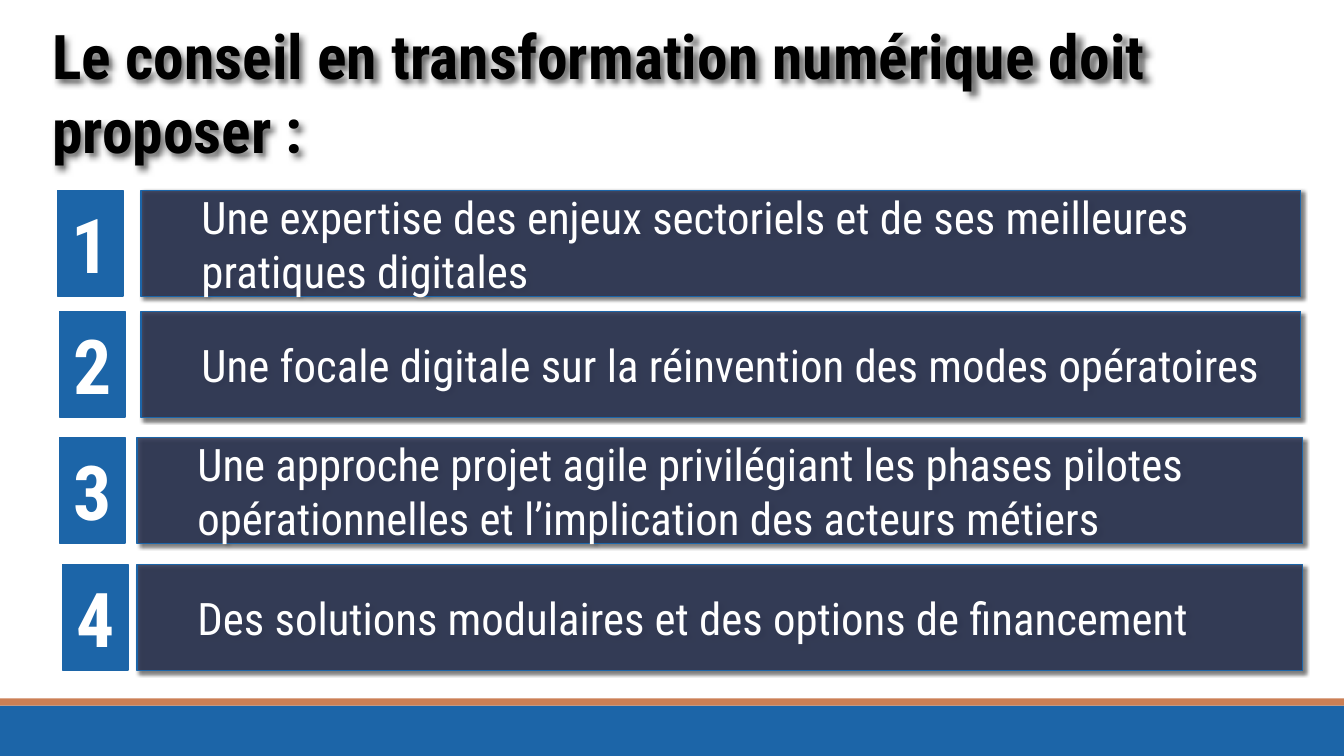
from lxml import etree
from pptx import Presentation
from pptx.dml.color import RGBColor
from pptx.enum.shapes import MSO_SHAPE
from pptx.enum.text import MSO_ANCHOR, PP_ALIGN
from pptx.oxml.ns import qn
from pptx.util import Inches, Pt

# Content: number, text, number left, bar left, top, bar width
TITLE = "Le conseil en transformation numérique doit proposer :"
PROPOSALS = [
    ("1", "Une expertise des enjeux sectoriels et de ses meilleures pratiques digitales",
     0.57, 1.4, 1.89, 11.5),
    ("2", "Une focale digitale sur la réinvention des modes opératoires",
     0.59, 1.4, 3.09, 11.5),
    ("3", "Une approche projet agile privilégiant les phases pilotes opérationnelles "
          "et l’implication des acteurs métiers",
     0.59, 1.36, 4.34, 11.56),
    ("4", "Des solutions modulaires et des options de financement",
     0.62, 1.36, 5.6, 11.56),
]

# Style
FONT = "Roboto Condensed"
BLUE = RGBColor(0x1C, 0x65, 0xA8)
COPPER = RGBColor(0xCB, 0x7F, 0x55)
NAVY = RGBColor(0x27, 0x30, 0x4E)
WHITE = RGBColor(0xFF, 0xFF, 0xFF)
BLACK = RGBColor(0, 0, 0)
SLIDE_W, SLIDE_H = 13.33, 7.5
ROW_H, NUMBER_W = 1.05, 0.65

prs = Presentation()
prs.slide_width, prs.slide_height = Inches(SLIDE_W), Inches(SLIDE_H)
slide = prs.slides.add_slide(prs.slide_layouts[6])


def add_block(left, top, width, height, fill, line_width=None):
    block = slide.shapes.add_shape(MSO_SHAPE.RECTANGLE, Inches(left), Inches(top),
                                   Inches(width), Inches(height))
    block.shadow.inherit = False
    block.fill.solid()
    block.fill.fore_color.rgb = fill
    if line_width:
        block.line.color.rgb = BLUE
        block.line.width = Pt(line_width)
    else:
        block.line.fill.background()
    return block


def write(shape, text, size, color, bold=False, align=PP_ALIGN.LEFT,
          anchor=MSO_ANCHOR.MIDDLE, indent=0):
    frame = shape.text_frame
    frame.word_wrap = True
    frame.vertical_anchor = anchor
    paragraph = frame.paragraphs[0]
    paragraph.alignment = align
    if indent:
        properties = paragraph._p.get_or_add_pPr()
        properties.set("marL", str(Inches(indent)))
        properties.set("indent", "0")
    run = paragraph.add_run()
    run.text = text
    run.font.name, run.font.size, run.font.bold = FONT, Pt(size), bold
    run.font.color.rgb = color


def set_alpha(color_element, percent):
    etree.SubElement(color_element, qn("a:alpha"), val=str(percent * 1000))


def cast_shadow(shape, blur, distance):
    shape.shadow.inherit = False
    effects = shape._element.spPr.find(qn("a:effectLst"))
    shadow = etree.SubElement(effects, qn("a:outerShdw"), blurRad=str(Pt(blur)),
                              dist=str(Pt(distance)), dir=str(45 * 60000),
                              algn="tl", rotWithShape="0")
    set_alpha(etree.SubElement(shadow, qn("a:srgbClr"), val=str(BLACK)), 60)


# Footer bands
add_block(0, 7, SLIDE_W, 0.5, BLUE)
add_block(0, 6.93, SLIDE_W, 0.07, COPPER)

# Title
title = slide.shapes.add_textbox(Inches(0.22), Inches(0.13), Inches(12.22), Inches(1.58))
write(title, TITLE, 44, BLACK, bold=True, anchor=MSO_ANCHOR.TOP, indent=0.2)
cast_shadow(title, blur=4, distance=3)

# Numbered proposals
for number, proposal, number_left, bar_left, top, bar_width in PROPOSALS:
    bar = add_block(bar_left, top, bar_width, ROW_H, NAVY, line_width=1)
    set_alpha(bar._element.spPr.find(qn("a:solidFill"))[0], 85)
    cast_shadow(bar, blur=3, distance=2)
    write(bar, proposal, 32, WHITE, indent=0.5)
    badge = add_block(number_left, top, NUMBER_W, ROW_H, BLUE, line_width=1.25)
    write(badge, number, 54, WHITE, bold=True, align=PP_ALIGN.CENTER)

prs.save("out.pptx")
